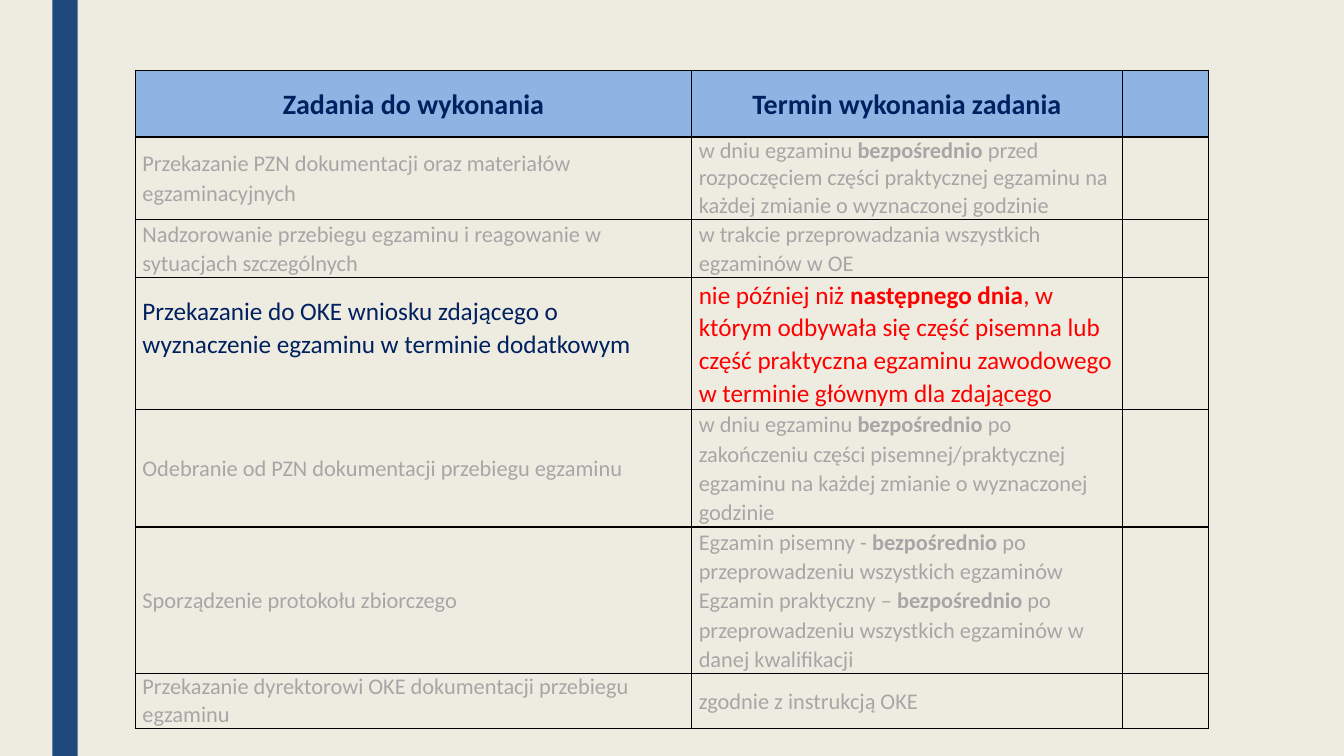
"""Build the slide with the table of exam tasks and their deadlines."""
from lxml import etree
from pptx import Presentation
from pptx.dml.color import RGBColor as RGB
from pptx.enum.shapes import MSO_SHAPE as SHAPE
from pptx.enum.text import MSO_ANCHOR as ANCHOR, PP_ALIGN as ALIGN
from pptx.oxml.ns import qn
from pptx.util import Cm, Pt

COLORS = {"bg": "EEECE1", "bar": "1F497D", "head": "8EB4E3", "navy": "002060",
          "gray": "A6A6A6", "red": "FF0000", "border": "000000"}
COLUMNS = [14.02, 10.85, 2.18]
HEIGHTS = [1.68, 2.07, 1.48, 3.3, 2.96, 3.69, 1.38]
ROWS = [
    ("Zadania do wykonania", "Termin wykonania zadania"),
    ("Przekazanie PZN dokumentacji oraz materiałów egzaminacyjnych",
     "w dniu egzaminu **bezpośrednio** przed rozpoczęciem części praktycznej "
     "egzaminu na każdej zmianie o wyznaczonej godzinie"),
    ("Nadzorowanie przebiegu egzaminu i reagowanie w sytuacjach szczególnych",
     "w trakcie przeprowadzania wszystkich egzaminów w OE"),
    ("Przekazanie do OKE wniosku zdającego o wyznaczenie egzaminu w terminie dodatkowym",
     "nie później niż **następnego dnia**, w którym odbywała się część pisemna lub "
     "część praktyczna egzaminu zawodowego w terminie głównym dla zdającego"),
    ("Odebranie od PZN dokumentacji przebiegu egzaminu",
     "w dniu egzaminu **bezpośrednio** po zakończeniu części pisemnej/praktycznej "
     "egzaminu na każdej zmianie o wyznaczonej godzinie"),
    ("Sporządzenie protokołu zbiorczego",
     "Egzamin pisemny - **bezpośrednio** po przeprowadzeniu wszystkich egzaminów\n"
     "Egzamin praktyczny – **bezpośrednio** po przeprowadzeniu wszystkich egzaminów "
     "w danej kwalifikacji"),
    ("Przekazanie dyrektorowi OKE dokumentacji przebiegu egzaminu",
     "zgodnie z instrukcją OKE"),
]
HEADER, CURRENT = 0, 3
SINGLE_SPACED = {(1, 1), (6, 0)}


def add_borders(cell):
    tcPr = cell._tc.get_or_add_tcPr()
    for side in ("lnL", "lnR", "lnT", "lnB"):
        ln = etree.SubElement(tcPr, qn(f"a:{side}"), w=str(Pt(1)))
        fill = etree.SubElement(ln, qn("a:solidFill"))
        etree.SubElement(fill, qn("a:srgbClr"), val=COLORS["border"])


def write_cell(cell, text, size, color, spacing, header):
    cell.vertical_anchor = ANCHOR.MIDDLE
    cell.margin_left = cell.margin_right = Cm(0.18)
    cell.margin_top = cell.margin_bottom = 0
    tf = cell.text_frame
    for i, line in enumerate(text.split("\n")):
        p = tf.add_paragraph() if i else tf.paragraphs[0]
        p.line_spacing = spacing
        p.alignment = ALIGN.CENTER if header else ALIGN.LEFT
        p.font.name = "Calibri"
        p.font.size = Pt(size)
        p.font.bold = header
        p.font.color.rgb = RGB.from_string(COLORS[color])
        for j, part in enumerate(line.split("**")):
            r = p.add_run()
            r.text = part
            if j % 2:
                r.font.bold = True


prs = Presentation()
prs.slide_width, prs.slide_height = Cm(33.87), Cm(19.05)
s = prs.slides.add_slide(prs.slide_layouts[6])
s.background.fill.solid()
s.background.fill.fore_color.rgb = RGB.from_string(COLORS["bg"])

bar = s.shapes.add_shape(SHAPE.RECTANGLE, Cm(1.32), 0, Cm(0.64), prs.slide_height)
bar.shadow.inherit = False
bar.fill.solid()
bar.fill.fore_color.rgb = RGB.from_string(COLORS["bar"])
bar.line.fill.background()

table = s.shapes.add_table(len(ROWS), len(COLUMNS), Cm(3.41), Cm(1.77),
                           Cm(sum(COLUMNS)), Cm(sum(HEIGHTS))).table
table.first_row = table.horz_banding = False
for column, width in zip(table.columns, COLUMNS):
    column.width = Cm(width)

for i, (row, height) in enumerate(zip(table.rows, HEIGHTS)):
    row.height = Cm(height)
    for cell in row.cells:
        add_borders(cell)
        if i == HEADER:
            cell.fill.solid()
            cell.fill.fore_color.rgb = RGB.from_string(COLORS["head"])
        else:
            cell.fill.background()
    for j, text in enumerate(ROWS[i]):
        size, color = 16, "gray"
        if i == HEADER:
            size, color = 20, "navy"
        elif i == CURRENT:
            size, color = 18, ("navy", "red")[j]
        spacing = 1.0 if (i, j) in SINGLE_SPACED else 1.07
        write_cell(table.cell(i, j), text, size, color, spacing, i == HEADER)

table.cell(CURRENT, 0).margin_bottom = Cm(0.83)

prs.save("out.pptx")
